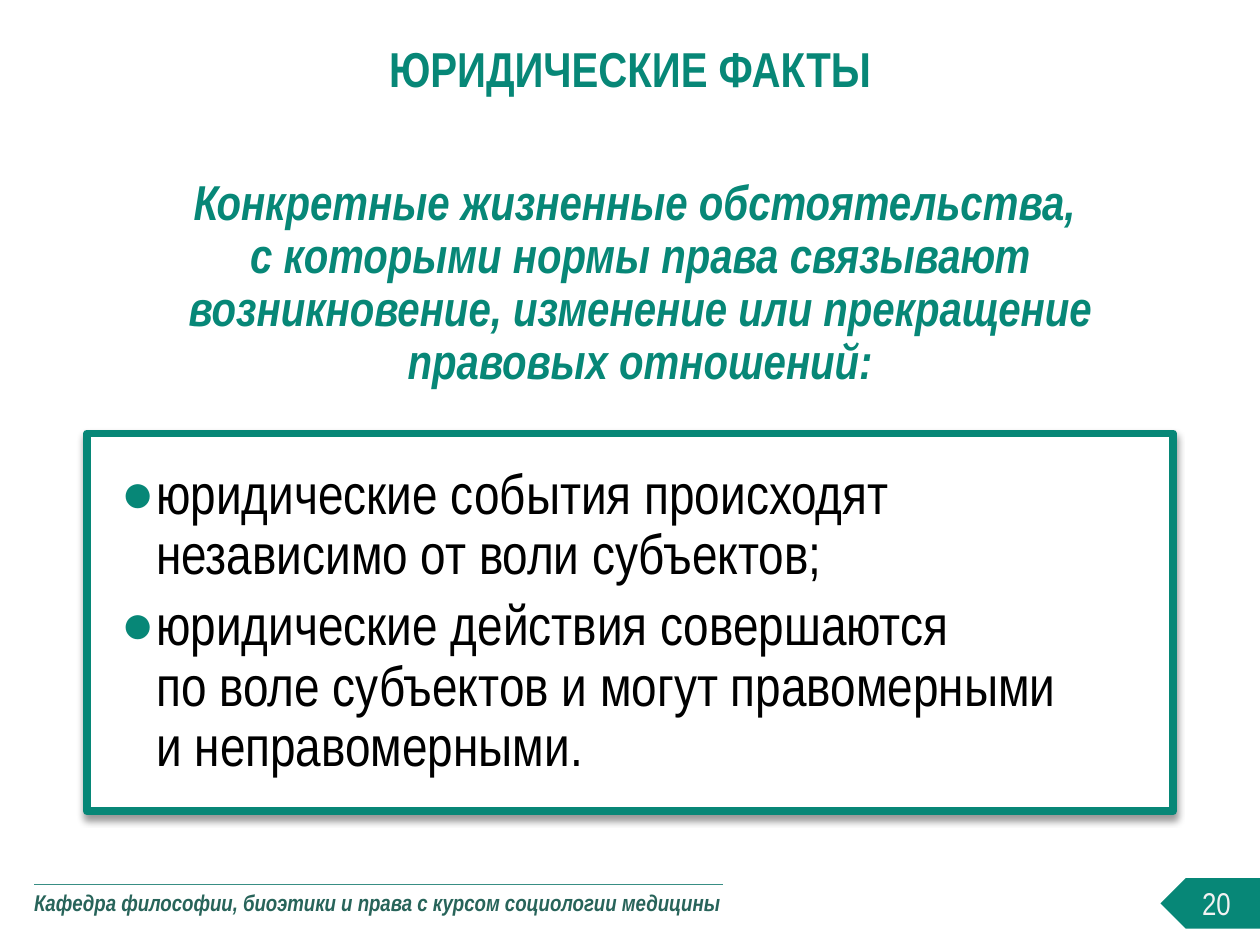
from lxml.etree import SubElement as Sub
from pptx import Presentation
from pptx.dml.color import RGBColor
from pptx.enum.shapes import MSO_SHAPE as Shape
from pptx.enum.text import MSO_ANCHOR as Anchor, MSO_AUTO_SIZE as Fit, PP_ALIGN as Align
from pptx.oxml.ns import qn
from pptx.util import Inches, Pt

TEAL = RGBColor(0x07, 0x87, 0x77)
RULE = RGBColor(0x38, 0x8E, 0x84)
DARK = RGBColor(0x28, 0x64, 0x5A)
BLACK = RGBColor(0, 0, 0)
WHITE = RGBColor(0xFF, 0xFF, 0xFF)
PALE = RGBColor(0xF2, 0xF2, 0xF2)
FONT = "Arial Narrow"


def place(shape, box):
    shape.left, shape.top, shape.width, shape.height = map(Inches, box)


def set_frame(frame, pads, anchor=Anchor.MIDDLE):
    frame.word_wrap = True
    frame.auto_size = Fit.NONE
    frame.vertical_anchor = anchor
    (frame.margin_left, frame.margin_top,
     frame.margin_right, frame.margin_bottom) = map(Inches, pads)


def add_text(para, lines, size, color, bold=False, italic=False):
    for i, line in enumerate(lines):
        if i:
            para.add_line_break()
        run = para.add_run()
        run.text = line
        font = run.font
        font.name, font.size = FONT, Pt(size)
        font.bold, font.italic = bold, italic
        font.color.rgb = color


def add_bullet(para):
    props = para._p.get_or_add_pPr()
    props.set("marL", str(Inches(0.39)))
    props.set("indent", str(Inches(-0.28)))
    Sub(Sub(props, qn("a:buClr")), qn("a:srgbClr"), val=str(TEAL))
    Sub(props, qn("a:buFont"), typeface="Arial")
    Sub(props, qn("a:buChar"), char="●")


def add_shadow(shape):
    effects = Sub(shape._element.spPr, qn("a:effectLst"))
    outer = Sub(effects, qn("a:outerShdw"), blurRad=str(Pt(4)),
                dist=str(Pt(3)), dir="5400000", rotWithShape="0")
    tint = Sub(outer, qn("a:srgbClr"), val=str(BLACK))
    Sub(tint, qn("a:alpha"), val="40000")


def add_title(slide, box):
    title = slide.shapes.title
    place(title, box)
    set_frame(title.text_frame, (0, 0, 0, 0))
    para = title.text_frame.paragraphs[0]
    para.alignment, para.line_spacing = Align.CENTER, 0.9
    add_text(para, ["ЮРИДИЧЕСКИЕ ФАКТЫ"], 28, TEAL, bold=True)


def add_lead(slide, box):
    lead = slide.shapes.add_textbox(*map(Inches, box))
    set_frame(lead.text_frame, (0.2, 0.04, 0.04, 0.04))
    para = lead.text_frame.paragraphs[0]
    para.alignment, para.line_spacing = Align.CENTER, 0.9
    add_text(para, ["Конкретные жизненные обстоятельства, ",
                    "с которыми нормы права связывают возникновение, "
                    "изменение или прекращение правовых отношений:"],
             28, TEAL, bold=True, italic=True)


def add_list(slide, box):
    body = slide.placeholders[1]
    place(body, box)
    body.fill.solid()
    body.fill.fore_color.rgb = WHITE
    body.line.color.rgb = TEAL
    body.line.width = Pt(4.5)
    Sub(body.line._get_or_add_ln(), qn("a:round"))
    add_shadow(body)
    frame = body.text_frame
    set_frame(frame, (0.16, 0.04, 0.39, 0.04))
    items = [
        ["юридические события происходят независимо от воли субъектов;"],
        ["юридические действия совершаются",
         "по воле субъектов и могут правомерными",
         "и неправомерными."],
    ]
    for i, lines in enumerate(items):
        para = frame.add_paragraph() if i else frame.paragraphs[0]
        add_bullet(para)
        para.line_spacing = 0.9
        para.space_before = Pt(6 if i else 0)
        add_text(para, lines, 32, BLACK)


def add_footer(slide, box):
    table = slide.shapes.add_table(1, 1, *map(Inches, box)).table
    table.first_row = table.horz_banding = False
    cell = table.cell(0, 0)
    cell.margin_left = cell.margin_right = cell.margin_bottom = 0
    cell.margin_top = Inches(0.08)
    # Only the top border is drawn
    props = cell._tc.get_or_add_tcPr()
    for side in ("lnL", "lnR", "lnT", "lnB"):
        if side == "lnT":
            edge = Sub(props, qn("a:lnT"), w=str(Pt(1)))
            Sub(Sub(edge, qn("a:solidFill")), qn("a:srgbClr"), val=str(RULE))
        else:
            Sub(Sub(props, qn("a:" + side), w="0"), qn("a:noFill"))
    cell.fill.background()
    add_text(cell.text_frame.paragraphs[0],
             ["Кафедра философии, биоэтики и права с курсом социологии медицины"],
             13, DARK, bold=True, italic=True)


def add_number(slide, box):
    tag = slide.shapes.add_shape(Shape.PENTAGON, *map(Inches, box))
    tag.shadow.inherit = False
    tag.fill.solid()
    tag.fill.fore_color.rgb = TEAL
    tag.line.fill.background()
    tag._element.spPr.find(qn("a:xfrm")).set("flipH", "1")
    set_frame(tag.text_frame, (0.1, 0.05, 0.1, 0.05))
    para = tag.text_frame.paragraphs[0]
    para.alignment = Align.CENTER
    add_text(para, ["20"], 18, PALE)


def main():
    deck = Presentation()
    deck.slide_width, deck.slide_height = Inches(10), Inches(7.5)
    slide = deck.slides.add_slide(deck.slide_layouts[1])
    add_footer(slide, (0.27, 7.02, 5.47, 0.43))
    add_title(slide, (2.49, 0.31, 5.02, 0.51))
    add_list(slide, (0.69, 3.44, 8.62, 3))
    add_lead(slide, (0.69, 1.31, 8.62, 1.89))
    add_number(slide, (9.21, 6.97, 0.79, 0.4))
    deck.save("out.pptx")


if __name__ == "__main__":
    main()
